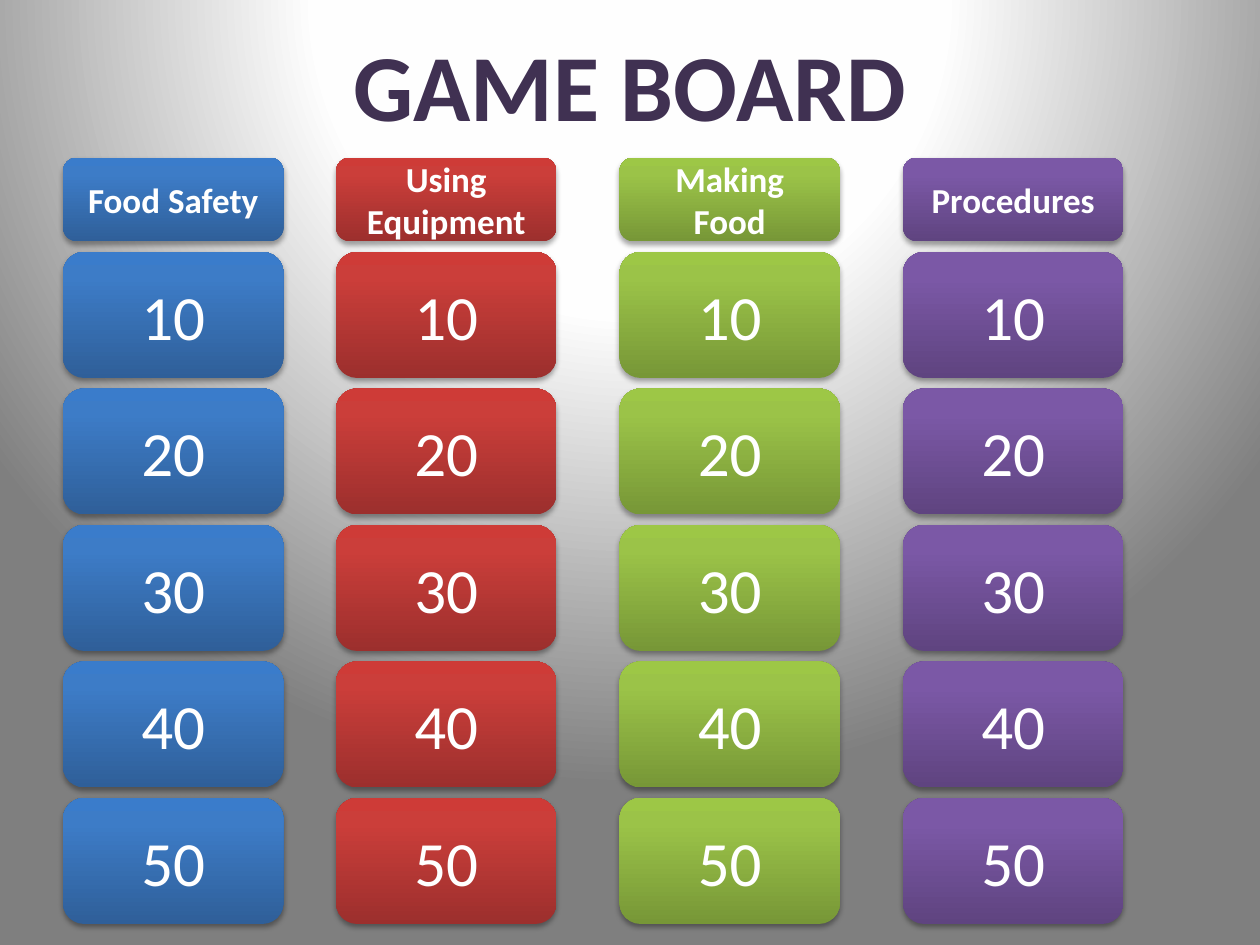
import pptx
import pptx.dml.color
import pptx.enum.shapes
import pptx.enum.text
import pptx.oxml
import pptx.oxml.ns
import pptx.util
from lxml import etree

Pt = pptx.util.Pt
RGBColor = pptx.dml.color.RGBColor
qn = pptx.oxml.ns.qn

FONT = "Calibri"
WHITE = RGBColor(0xFF, 0xFF, 0xFF)
BLACK = RGBColor(0x00, 0x00, 0x00)
TITLE_COLOR = RGBColor(0x40, 0x31, 0x52)
BACKGROUND_STOPS = [(0, WHITE), (40, RGBColor(0xFE, 0xFE, 0xFE)),
                    (100, RGBColor(0x7F, 0x7F, 0x7F))]
BLUE = (RGBColor(0x2F, 0x5F, 0x99), RGBColor(0x3D, 0x7C, 0xC7), RGBColor(0x3A, 0x7C, 0xCB))
RED = (RGBColor(0x9C, 0x2F, 0x2D), RGBColor(0xCB, 0x3E, 0x3A), RGBColor(0xCE, 0x3B, 0x37))
GREEN = (RGBColor(0x77, 0x97, 0x37), RGBColor(0x9B, 0xC3, 0x48), RGBColor(0x9D, 0xC7, 0x46))
PURPLE = (RGBColor(0x5F, 0x44, 0x80), RGBColor(0x7B, 0x58, 0xA6), RGBColor(0x7C, 0x57, 0xA8))

# Left edge in points, category, gradient colours
CATEGORIES = [
    (36, "Food Safety", BLUE),
    (192, "Using Equipment", RED),
    (354, "Making Food", GREEN),
    (516, "Procedures", PURPLE),
]
SCORES = [10, 20, 30, 40, 50]
BOARD_TOP = 90
TILE_WIDTH = 126
HEADER_HEIGHT = 48
TILE_HEIGHT = 72
TILE_GAP = 6


def add_element(parent, tag, **attributes):
    element = etree.SubElement(parent, qn(tag))
    for name, value in attributes.items():
        element.set(name, str(value))
    return element


def start_gradient(fill, parent, stops):
    """Give the fill its colour stops and return the element that awaits a direction."""
    fill.gradient()
    gradient = next(parent.iter(qn("a:gradFill")))
    for child in list(gradient):
        gradient.remove(child)
    stop_list = add_element(gradient, "a:gsLst")
    for position, color in stops:
        stop = add_element(stop_list, "a:gs", pos=position * 1000)
        add_element(stop, "a:srgbClr", val=color)
    return gradient


def paint_background(slide):
    fill = slide.background.fill
    gradient = start_gradient(fill, slide.element, BACKGROUND_STOPS)
    circle = add_element(gradient, "a:path", path="circle")
    add_element(circle, "a:fillToRect", l=50000, t=-80000, r=50000, b=180000)


def add_shadow(shape):
    shape.shadow.inherit = False
    effects = shape.element.spPr.find(qn("a:effectLst"))
    shadow = add_element(effects, "a:outerShdw", blurRad=Pt(3.15), dist=Pt(1.81),
                         dir=90 * 60000, rotWithShape=0)
    color = add_element(shadow, "a:srgbClr", val=BLACK)
    add_element(color, "a:alpha", val=35000)


def write_text(shape, text, size, color, bold):
    frame = shape.text_frame
    frame.word_wrap = True
    frame.vertical_anchor = pptx.enum.text.MSO_ANCHOR.MIDDLE
    paragraph = frame.paragraphs[0]
    paragraph.alignment = pptx.enum.text.PP_ALIGN.CENTER
    run = paragraph.add_run()
    run.text = text
    run.font.name = FONT
    run.font.size = Pt(size)
    run.font.bold = bold
    run.font.color.rgb = color


def place_title(slide, left, top, width, height):
    title = slide.shapes.title
    title.left, title.top = Pt(left), Pt(top)
    title.width, title.height = Pt(width), Pt(height)
    write_text(title, "GAME BOARD", 54, TITLE_COLOR, True)


def add_tile(slide, left, top, width, height, colors, text, size, bold):
    tile = slide.shapes.add_shape(pptx.enum.shapes.MSO_SHAPE.ROUNDED_RECTANGLE,
                                  Pt(left), Pt(top), Pt(width), Pt(height))
    gradient = start_gradient(tile.fill, tile.element.spPr, zip((0, 80, 100), colors))
    add_element(gradient, "a:lin", ang=270 * 60000, scaled=0)
    tile.line.fill.background()
    add_shadow(tile)
    write_text(tile, text, size, WHITE, bold)


def add_category_column(slide, left, top, width, category, colors):
    add_tile(slide, left, top, width, HEADER_HEIGHT, colors, category, 20, True)
    first_score_top = top + HEADER_HEIGHT + TILE_GAP
    for row, score in enumerate(SCORES):
        score_top = first_score_top + row * (TILE_HEIGHT + TILE_GAP)
        add_tile(slide, left, score_top, width, TILE_HEIGHT, colors, str(score), 36, False)


def main():
    presentation = pptx.Presentation()
    presentation.slide_width = Pt(720)
    presentation.slide_height = Pt(540)
    slide = presentation.slides.add_slide(presentation.slide_layouts.get_by_name("Title Only"))
    paint_background(slide)
    place_title(slide, 36, 0, 648, 96)
    for left, category, colors in CATEGORIES:
        add_category_column(slide, left, BOARD_TOP, TILE_WIDTH, category, colors)
    presentation.save("out.pptx")


if __name__ == "__main__":
    main()
